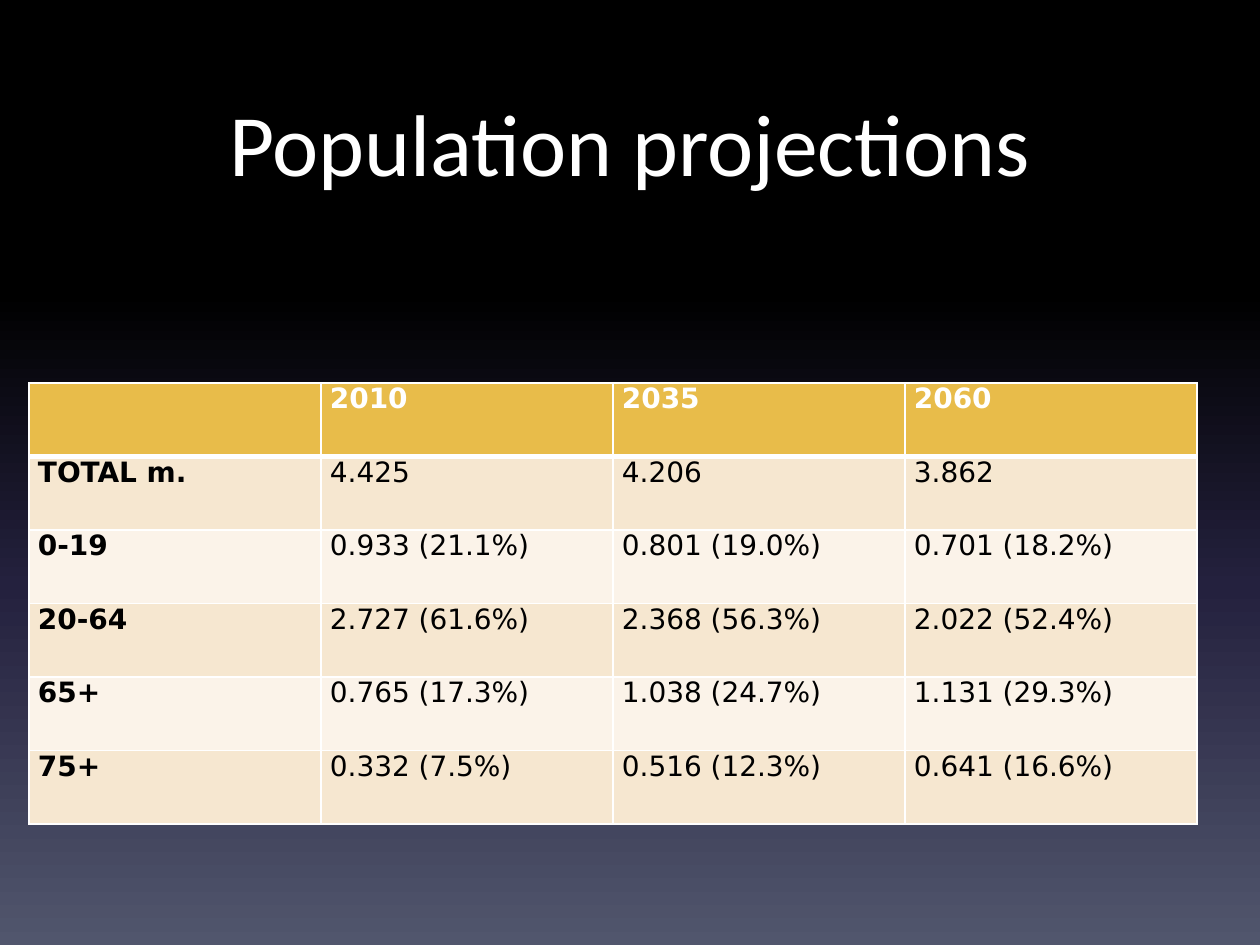
from typing import NamedTuple

from lxml import etree
from pptx import Presentation
from pptx.dml.color import RGBColor
from pptx.enum.text import MSO_ANCHOR, PP_ALIGN
from pptx.oxml.ns import qn
from pptx.util import Emu, Pt

PX = 914400 / 126
CENTER, JUSTIFY = PP_ALIGN.CENTER, PP_ALIGN.JUSTIFY
MIDDLE = MSO_ANCHOR.MIDDLE
COLORS = {
    "white": "FFFFFF",
    "black": "000000",
    "header": "E8BC4A",
    "odd": "F6E7D0",
    "even": "FBF3E9",
    "navy": "24213E",
    "slate": "51566D",
}
BACKGROUND = [(0, "black"), (31, "black"), (62, "navy"), (100, "slate")]


class Box(NamedTuple):
    left: int
    top: int
    width: int
    height: int


class Projection(NamedTuple):
    group: str
    y2010: str
    y2035: str
    y2060: str


TITLE_BOX = Box(63, 63, 1134, 158)
TABLE_BOX = Box(29, 383, 1168, 441)
PROJECTIONS = [
    Projection("", "2010", "2035", "2060"),
    Projection("TOTAL m.", "4.425", "4.206", "3.862"),
    Projection("0-19", "0.933 (21.1%)", "0.801 (19.0%)", "0.701 (18.2%)"),
    Projection("20-64", "2.727 (61.6%)", "2.368 (56.3%)", "2.022 (52.4%)"),
    Projection("65+", "0.765 (17.3%)", "1.038 (24.7%)", "1.131 (29.3%)"),
    Projection("75+", "0.332 (7.5%)", "0.516 (12.3%)", "0.641 (16.6%)"),
]


def px(length: int) -> Emu:
    return Emu(round(length * PX))


def rgb(name: str) -> RGBColor:
    return RGBColor.from_string(COLORS[name])


def paint_background(slide) -> None:
    fill = slide.background.fill
    fill.gradient()
    stops = slide.element.find(".//" + qn("a:gsLst"))
    for stop in list(stops):
        stops.remove(stop)
    for percent, color in BACKGROUND:
        stop = etree.SubElement(stops, qn("a:gs"), pos=str(percent * 1000))
        etree.SubElement(stop, qn("a:srgbClr"), val=COLORS[color])
    fill.gradient_angle = 270  # counter-clockwise, so top to bottom


def set_font(paragraph, family: str, size: int, color: str, bold: bool = False) -> None:
    font = paragraph.font
    font.name, font.size, font.bold = family, Pt(size), bold
    font.color.rgb = rgb(color)


def add_title(slide, text: str, box: Box) -> None:
    title = slide.shapes.title
    title.left, title.top, title.width, title.height = map(px, box)
    frame = title.text_frame
    frame.text = text
    frame.vertical_anchor = MIDDLE
    paragraph = frame.paragraphs[0]
    paragraph.alignment = CENTER
    set_font(paragraph, "Calibri", 50, "white")


def add_borders(cell, bottom_width: int) -> None:
    """Draw white cell edges, placed before the fill as the schema requires."""
    properties = cell._tc.get_or_add_tcPr()
    widths = {"a:lnL": 1, "a:lnR": 1, "a:lnT": 1, "a:lnB": bottom_width}
    for index, (tag, width) in enumerate(widths.items()):
        line = etree.Element(qn(tag), w=str(Pt(width)))
        fill = etree.SubElement(line, qn("a:solidFill"))
        etree.SubElement(fill, qn("a:srgbClr"), val=COLORS["white"])
        properties.insert(index, line)


def add_projection_table(slide, rows: list[Projection], box: Box) -> None:
    table = slide.shapes.add_table(len(rows), len(rows[0]), *map(px, box)).table
    for row, projection in enumerate(rows):
        header = row == 0
        band = "header" if header else "odd" if row % 2 else "even"
        for column, text in enumerate(projection):
            cell = table.cell(row, column)
            cell.fill.solid()
            cell.fill.fore_color.rgb = rgb(band)
            cell.margin_left = cell.margin_right = px(9)
            cell.margin_top = cell.margin_bottom = 0
            cell.text = text
            paragraph = cell.text_frame.paragraphs[0]
            paragraph.alignment = JUSTIFY
            paragraph.space_after = Pt(12)
            color = "white" if header else "black"
            set_font(paragraph, "DejaVu Sans", 16, color, header or column == 0)
            # Both cells that share the header rule carry the same width.
            add_borders(cell, 3 if header else 1)
            if row == 1:
                cell._tc.tcPr.find(qn("a:lnT")).set("w", str(Pt(3)))


def main() -> None:
    presentation = Presentation()
    presentation.slide_width, presentation.slide_height = px(1260), px(945)
    slide = presentation.slides.add_slide(presentation.slide_layouts[5])
    paint_background(slide)
    add_title(slide, "Population projections", TITLE_BOX)
    add_projection_table(slide, PROJECTIONS, TABLE_BOX)
    presentation.save("out.pptx")


if __name__ == "__main__":
    main()
